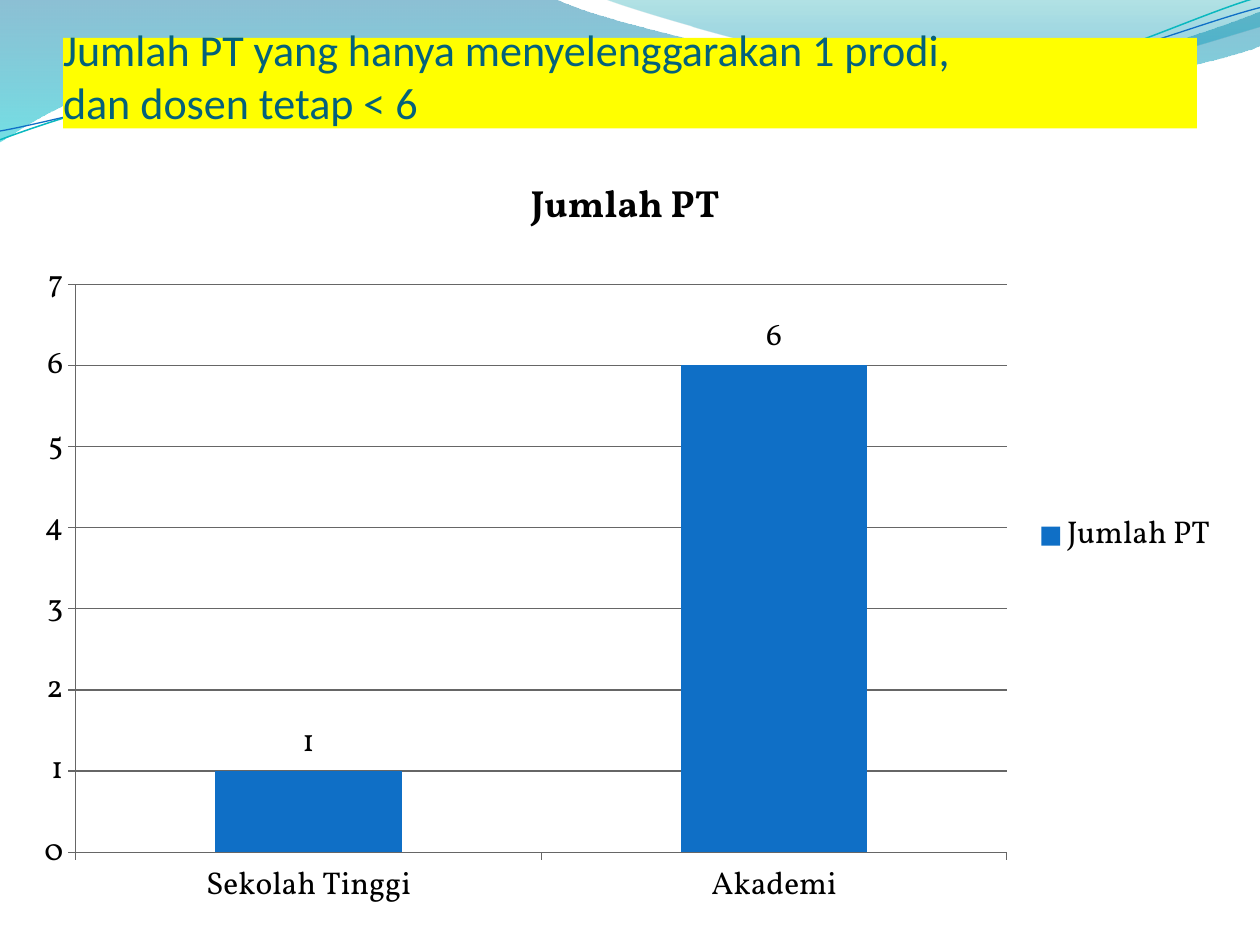
from dataclasses import dataclass
from math import cos, radians, sin
from typing import Optional

from lxml.etree import SubElement
from pptx import Presentation
from pptx.chart.data import CategoryChartData
from pptx.dml.color import RGBColor
from pptx.enum.chart import XL_CHART_TYPE, XL_LABEL_POSITION, XL_LEGEND_POSITION, XL_TICK_MARK
from pptx.enum.text import MSO_ANCHOR, MSO_AUTO_SIZE, PP_ALIGN
from pptx.oxml.ns import qn
from pptx.util import Inches, Pt

COLORS = {
    "yellow": "FFFF00",
    "title": "04617B",
    "blue": "0F6FC6",
    "teal": "0AB8BF",
    "black": "000000",
    "grid": "666666",
}


@dataclass(frozen=True)
class GradientStop:
    position: int
    color: str
    opacity: int


@dataclass(frozen=True)
class Wave:
    box: tuple
    start: tuple
    segments: tuple
    stops: tuple = ()
    line_color: Optional[str] = None
    line_width: float = 0
    rotation: float = 0


WAVES = (
    Wave(
        (-0.01, -0.01, 10.02, 1.14),
        (0, 0),
        ((4.4, -0.01), (4.76, 0.17, 6.64, 0.63, 7.58, 0.63),
         (8.53, 0.63, 9.58, 0.26, 10, 0.09), (10.01, 0.36),
         (9.83, 0.44, 8.7, 0.76, 7.46, 0.75), (6.22, 0.75, 3.82, 0.28, 2.57, 0.34),
         (1.29, 0.36, 0.46, 0.83, -0.01, 1.13), (0, 0)),
        stops=(GradientStop(0, "0074A1", 45), GradientStop(100, "00C6CF", 55)),
    ),
    Wave(
        (4.79, -0.01, 5.21, 0.7),
        (4.79, -0.01),
        ((5.09, 0.11, 6.82, 0.62, 7.69, 0.65), (8.56, 0.69, 9.61, 0.32, 10, 0.21),
         (10, 0), (4.79, -0.01)),
        stops=(GradientStop(0, "00A1A9", 30), GradientStop(80, "008BBF", 45)),
    ),
    Wave(
        (-0.02, 0.22, 10.02, 0.71),
        (0, 1.11),
        ((0.48, 0.93, 1.58, 0.57, 2.77, 0.52), (3.95, 0.47, 5.93, 0.89, 7.13, 0.8),
         (8.33, 0.71, 9.38, 0.15, 9.98, -0.02)),
        line_color="teal", line_width=0.85, rotation=357.3,
    ),
    Wave(
        (-0.02, 0.3, 10.03, 0.58),
        (0, 1.04),
        ((0.47, 0.96, 1.64, 0.61, 2.83, 0.56), (4.03, 0.51, 5.97, 0.84, 7.17, 0.75),
         (8.36, 0.67, 9.41, 0.21, 10, 0.06)),
        line_color="blue", line_width=0.75, rotation=357.3,
    ),
)


def rgb(name: str) -> RGBColor:
    return RGBColor.from_string(COLORS[name])


def local_point(wave: Wave, x: float, y: float) -> tuple:
    left, top, width, height = wave.box
    dx, dy = x - left - width / 2, y - top - height / 2
    angle = radians(-wave.rotation)
    return (
        Inches(dx * cos(angle) - dy * sin(angle) + width / 2),
        Inches(dx * sin(angle) + dy * cos(angle) + height / 2),
    )


def add_command(outline, wave: Wave, tag: str, numbers: tuple) -> None:
    command = SubElement(outline, qn(tag))
    for x, y in zip(numbers[::2], numbers[1::2]):
        local_x, local_y = local_point(wave, x, y)
        SubElement(command, qn("a:pt"), x=str(local_x), y=str(local_y))


def set_curves(shape, wave: Wave) -> None:
    outline = next(shape.element.iter(qn("a:path")))
    for child in list(outline):
        outline.remove(child)
    outline.set("w", str(shape.width))
    outline.set("h", str(shape.height))
    add_command(outline, wave, "a:moveTo", wave.start)
    for segment in wave.segments:
        tag = "a:lnTo" if len(segment) == 2 else "a:cubicBezTo"
        add_command(outline, wave, tag, segment)
    if wave.stops:
        SubElement(outline, qn("a:close"))


def set_gradient(shape, stops: tuple) -> None:
    shape.fill.gradient()
    gradient = shape.element.spPr.find(qn("a:gradFill"))
    for child in list(gradient):
        gradient.remove(child)
    stop_list = SubElement(gradient, qn("a:gsLst"))
    for stop in stops:
        stop_element = SubElement(stop_list, qn("a:gs"), pos=str(stop.position * 1000))
        color = SubElement(stop_element, qn("a:srgbClr"), val=stop.color)
        SubElement(color, qn("a:alpha"), val=str(stop.opacity * 1000))
    SubElement(gradient, qn("a:lin"), ang=str(90 * 60000), scaled="0")


def draw_wave(slide, wave: Wave) -> None:
    left, top, width, height = (Inches(length) for length in wave.box)
    builder = slide.shapes.build_freeform(left, top)
    builder.add_line_segments([(left + width, top + height)], close=False)
    shape = builder.convert_to_shape()
    set_curves(shape, wave)
    shape.rotation = wave.rotation
    shape.shadow.inherit = False
    if wave.stops:
        set_gradient(shape, wave.stops)
        shape.line.fill.background()
    else:
        shape.fill.background()
        shape.line.color.rgb = rgb(wave.line_color)
        shape.line.width = Pt(wave.line_width)


def format_font(font, *, size: float, name: str, color: str, bold: bool = False) -> None:
    font.size = Pt(size)
    font.name = name
    font.bold = bold
    font.color.rgb = rgb(color)


def write_text(text_frame, lines: tuple, *, alignment=None, **font_format) -> None:
    paragraph = text_frame.paragraphs[0]
    paragraph.alignment = alignment
    for index, line in enumerate(lines):
        if index:
            paragraph.add_line_break()
        run = paragraph.add_run()
        run.text = line
        format_font(run.font, **font_format)


def add_title(slide) -> None:
    title = slide.shapes.title
    title.element.getparent().append(title.element)
    title.left, title.top = Inches(0.5), Inches(0.3)
    title.width, title.height = Inches(9), Inches(0.72)
    title.fill.solid()
    title.fill.fore_color.rgb = rgb("yellow")
    text_frame = title.text_frame
    text_frame.word_wrap = True
    text_frame.auto_size = MSO_AUTO_SIZE.NONE
    text_frame.vertical_anchor = MSO_ANCHOR.BOTTOM
    text_frame.margin_left = text_frame.margin_right = text_frame.margin_bottom = 0
    text_frame.margin_top = Inches(0.05)
    write_text(
        text_frame,
        ("Jumlah PT yang hanya menyelenggarakan 1 prodi, ", "dan dosen tetap < 6"),
        alignment=PP_ALIGN.LEFT, size=25.2, name="Calibri", color="title",
    )


def add_column_chart(slide) -> None:
    data = CategoryChartData()
    data.categories = ["Sekolah Tinggi", "Akademi"]
    data.add_series("Jumlah PT", (1, 6))
    chart = slide.shapes.add_chart(
        XL_CHART_TYPE.COLUMN_CLUSTERED,
        Inches(0.16), Inches(1.17), Inches(9.61), Inches(6.17), data,
    ).chart
    format_font(chart.font, size=18, name="Vollkorn", color="black")
    chart.has_title = True
    write_text(chart.chart_title.text_frame, ("Jumlah PT",),
               size=21.6, name="Vollkorn", color="black", bold=True)
    chart.has_legend = True
    chart.legend.position = XL_LEGEND_POSITION.RIGHT
    chart.legend.include_in_layout = False
    for axis in (chart.category_axis, chart.value_axis):
        axis.major_tick_mark = XL_TICK_MARK.OUTSIDE
        axis.format.line.color.rgb = rgb("grid")
    chart.value_axis.has_major_gridlines = True
    chart.value_axis.major_gridlines.format.line.color.rgb = rgb("grid")
    plot = chart.plots[0]
    plot.vary_by_categories = False
    plot.gap_width = 150
    series = plot.series[0]
    series.format.fill.solid()
    series.format.fill.fore_color.rgb = rgb("blue")
    series.data_labels.show_value = True
    series.data_labels.position = XL_LABEL_POSITION.OUTSIDE_END


def main() -> None:
    presentation = Presentation()
    presentation.slide_width, presentation.slide_height = Inches(10), Inches(7.5)
    slide = presentation.slides.add_slide(presentation.slide_layouts[5])
    for wave in WAVES:
        draw_wave(slide, wave)
    add_title(slide)
    add_column_chart(slide)
    presentation.save("out.pptx")


main()
